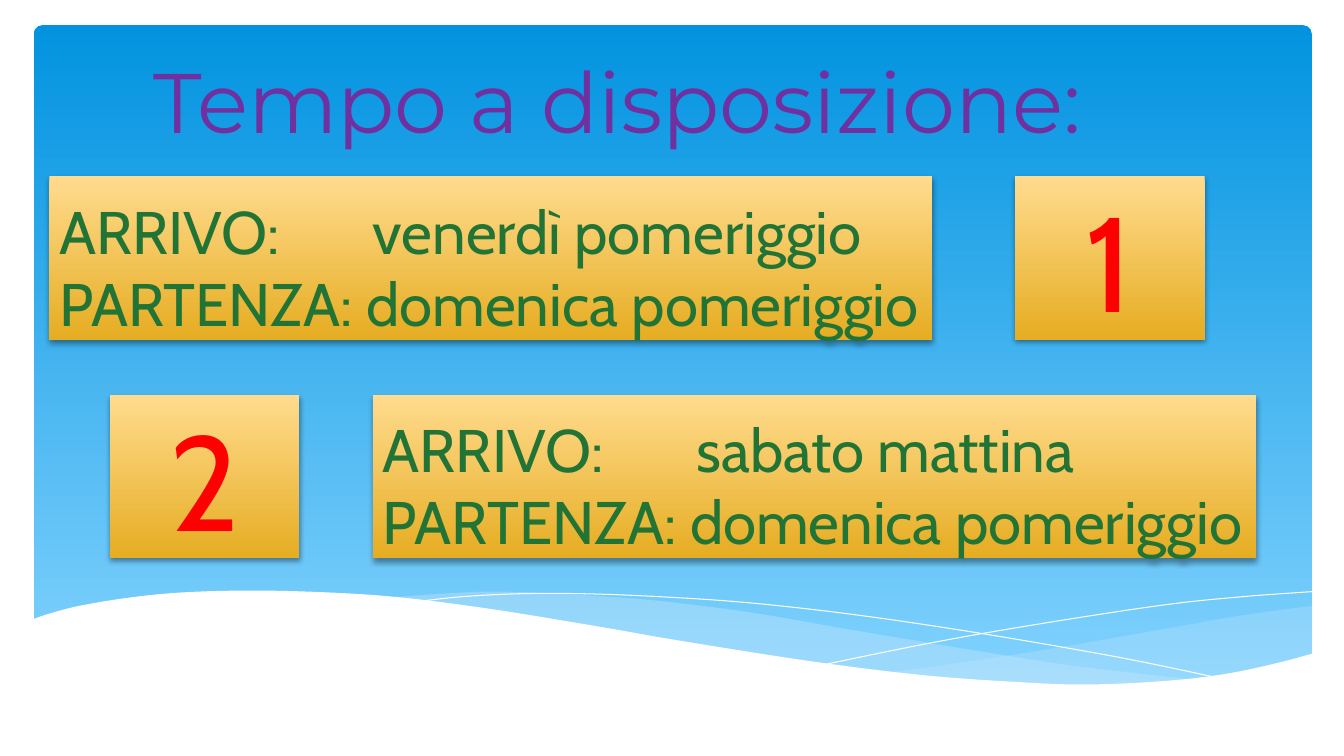
from lxml import etree
from pptx import Presentation
from pptx.dml.color import RGBColor
from pptx.enum.shapes import MSO_SHAPE
from pptx.enum.text import MSO_ANCHOR, PP_ALIGN
from pptx.oxml.ns import qn
from pptx.util import Pt

RECT, ROUND = MSO_SHAPE.RECTANGLE, MSO_SHAPE.ROUNDED_RECTANGLE
LEFT, CENTER = PP_ALIGN.LEFT, PP_ALIGN.CENTER
BOTTOM, MIDDLE = MSO_ANCHOR.BOTTOM, MSO_ANCHOR.MIDDLE
WHITE = RGBColor(0xFF, 0xFF, 0xFF)
SKY = RGBColor(0x02, 0x93, 0xE0), RGBColor(0x83, 0xD3, 0xFE)
GOLD = RGBColor(0xFF, 0xDB, 0x8E), RGBColor(0xE6, 0xAD, 0x22)
MIST = RGBColor(0xC6, 0xE7, 0xFC)
PURPLE = RGBColor(0x70, 0x30, 0xA0)
GREEN = RGBColor(0x21, 0x74, 0x36)
RED = RGBColor(0xFF, 0x00, 0x00)

EAST = [
    [(937.4, 432.7), (884.9, 439.9), (827.3, 450), (748.8, 463.7),
     (678.2, 474.5), (635.8, 480.2)],
    [(635.8, 480.2), (677.5, 484.6), (727.2, 488.2), (782.6, 489.6),
     (838, 486.7), (884.9, 480.2), (912.2, 474.5), (937.4, 467.3)],
]
MID = [
    [(858.2, 486), (775.4, 476.6), (712.8, 467.3), (604.8, 449.3),
     (547.2, 439.2), (495.4, 432), (446.4, 427), (383.8, 423.4),
     (347, 422.6), (315.4, 424.1), (275, 427)],
    [(275, 427), (329, 432.7), (388.8, 441.4), (432, 449.3),
     (509, 462.2), (561.6, 470.2), (625, 479.5), (681.1, 485.3),
     (731.5, 488.9), (775.4, 489.6), (815, 488.9), (858.2, 486)],
]
FALL = [[(297.4, 429.8), (330.5, 426.2), (372.2, 424.1), (415.4, 424.1),
         (470.2, 426.2), (535, 430.6), (611.3, 439.2), (699.1, 452.2),
         (798.5, 469.4), (872, 484.6)]]
RISE = [[(589.7, 474.5), (668.2, 458.6), (746.6, 445), (832.3, 432),
         (887.8, 426.2), (937.4, 422.6)]]
SNOW = [
    [(938.2, 466.6), (911.5, 473.8), (873.4, 481.7), (828.7, 486.7),
     (776.2, 488.9), (730.8, 487.4), (661, 482.4), (578.9, 472.3),
     (483.1, 457.2), (429.1, 447.8), (349.9, 434.9), (280.8, 426.2),
     (220.3, 422.6), (169.2, 421.9), (126.7, 423.4), (91.4, 427),
     (56.9, 432.7), (34.6, 438.5), (22.3, 442.8)],
    [(22.3, 526.3), (938.2, 526.3)],
]


def smooth(knots, steps=6):
    """Return points of a Catmull-Rom curve through the knots."""
    ends = [knots[0], *knots, knots[-1]]
    curve = [knots[0]]
    for a, b, c, d in zip(ends, ends[1:], ends[2:], ends[3:]):
        for step in range(1, steps + 1):
            t = step / steps
            curve.append(tuple(
                (2 * q + (r - p) * t + (2 * p - 5 * q + 4 * r - s) * t ** 2
                 + (3 * q - p - 3 * r + s) * t ** 3) / 2
                for p, q, r, s in zip(a, b, c, d)))
    return curve


def add_wave(slide, edges, color, alpha=100, filled=True):
    """Draw a wave as a filled band or as a hairline."""
    dots = [(Pt(x), Pt(y)) for edge in edges for x, y in smooth(edge)]
    pen = slide.shapes.build_freeform(*dots[0])
    pen.add_line_segments(dots[1:], close=filled)
    wave = pen.convert_to_shape()
    wave.shadow.inherit = False
    if not filled:
        wave.fill.background()
        wave.line.color.rgb = color
        wave.line.width = Pt(0)
        return
    wave.line.fill.background()
    wave.fill.solid()
    wave.fill.fore_color.rgb = color
    tint = wave.fill._xPr.find(".//" + qn("a:srgbClr"))
    etree.SubElement(tint, qn("a:alpha"), val=str(alpha * 1000))


def add_panel(slide, kind, box, colors):
    """Add a shape with a downward gradient."""
    panel = slide.shapes.add_shape(kind, *map(Pt, box))
    panel.shadow.inherit = False
    panel.line.fill.background()
    panel.fill.gradient()
    panel.fill.gradient_angle = 270
    for stop, color in zip(panel.fill.gradient_stops, colors):
        stop.color.rgb = color
    return panel


def add_shade(shape):
    """Give a shape a soft shadow below it."""
    effects = shape._element.spPr.find(qn("a:effectLst"))
    shade = etree.SubElement(effects, qn("a:outerShdw"), blurRad=str(Pt(4)),
                             dist=str(Pt(2)), dir="5400000", rotWithShape="0")
    black = etree.SubElement(shade, qn("a:srgbClr"), val="000000")
    etree.SubElement(black, qn("a:alpha"), val="38000")


def set_text(shape, text, size, color, font="Cabin", align=LEFT,
             anchor=BOTTOM, inset=0, foot=0, tab=None):
    """Write formatted text into a shape."""
    frame = shape.text_frame
    frame.word_wrap = True
    frame.vertical_anchor = anchor
    frame.margin_left = Pt(inset)
    frame.margin_right = frame.margin_top = 0
    frame.margin_bottom = Pt(foot)
    frame.text = text
    for para in frame.paragraphs:
        para.alignment = align
        for run in para.runs:
            run.font.size = Pt(size)
            run.font.name = font
            run.font.color.rgb = color
        if tab:
            stops = etree.SubElement(para._p.get_or_add_pPr(), qn("a:tabLst"))
            etree.SubElement(stops, qn("a:tab"), pos=str(Pt(tab)), algn="l")


def add_card(slide, left, top, width, text, **style):
    """Add a golden card with text."""
    card = add_panel(slide, RECT, (left, top, width, 116.6), GOLD)
    add_shade(card)
    set_text(card, text, **style)


def main():
    """Build the slide and save it."""
    deck = Presentation()
    deck.slide_width, deck.slide_height = Pt(960), Pt(540)
    slide = deck.slides.add_slide(deck.slide_layouts[6])

    sky = add_panel(slide, ROUND, (24, 18, 913, 475), SKY)
    sky.adjustments[0] = 0.013
    add_wave(slide, EAST, MIST, alpha=29)
    add_wave(slide, MID, MIST, alpha=40)
    add_wave(slide, FALL, WHITE, filled=False)
    add_wave(slide, RISE, WHITE, filled=False)
    add_wave(slide, SNOW, WHITE)

    title = slide.shapes.add_textbox(Pt(24), Pt(34), Pt(834), Pt(75))
    set_text(title, "Tempo a disposizione:", 60.3, PURPLE,
             font="Montserrat", align=CENTER, anchor=MIDDLE)

    plans = [
        (126, 35.3, 725, "1", "venerdì pomeriggio"),
        (282.2, 266.4, 78.5, "2", "sabato mattina"),
    ]
    for top, left, side, digit, start in plans:
        text = f"ARRIVO:\t{start}\nPARTENZA: domenica pomeriggio"
        add_card(slide, left, top, 630.7, text, size=42.9, color=GREEN,
                 inset=7.2, foot=1, tab=224)
        add_card(slide, side, top, 135.4, digit, size=96, color=RED,
                 align=CENTER)
    deck.save("out.pptx")


if __name__ == "__main__":
    main()
